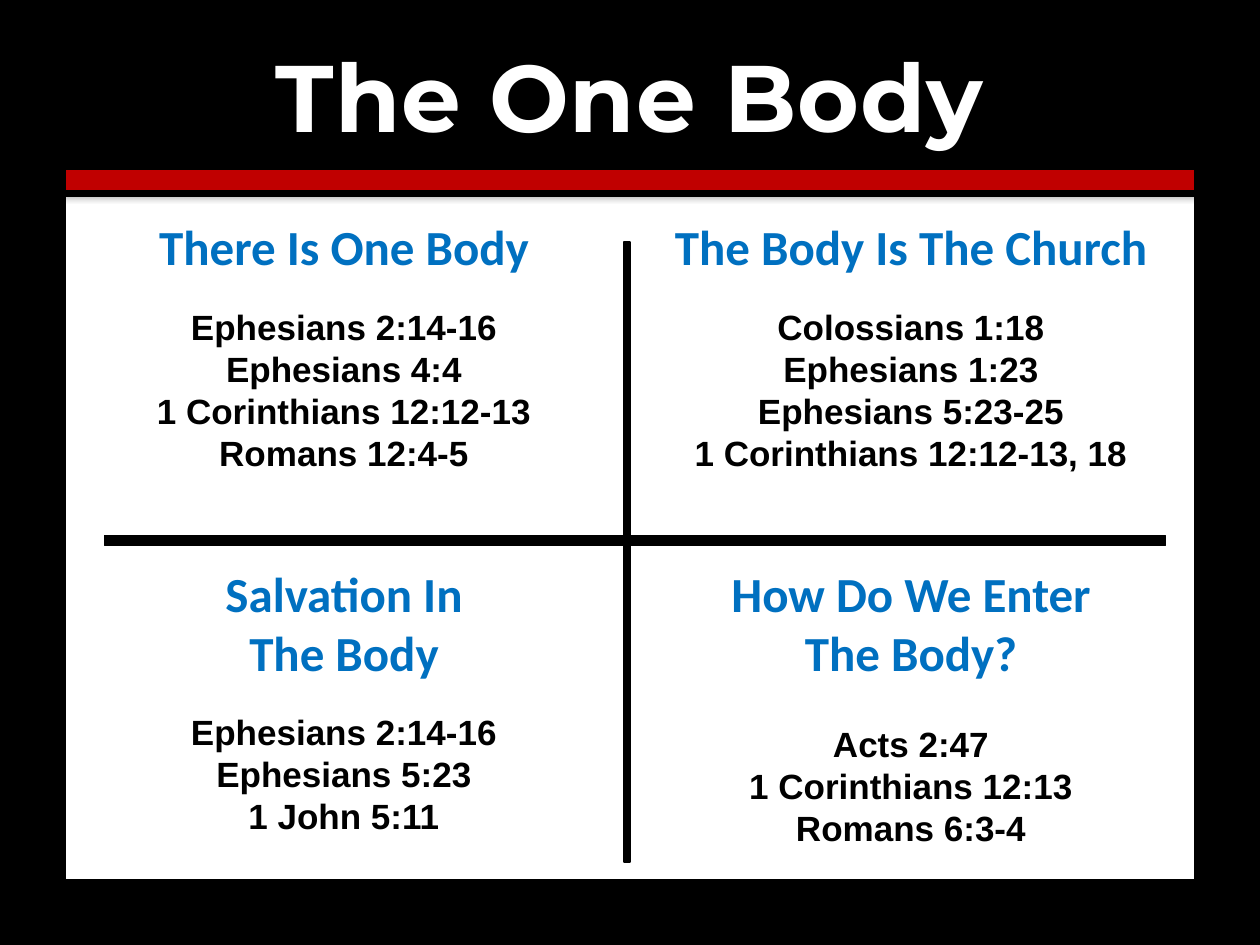
from lxml.etree import SubElement as Sub
from pptx import Presentation
from pptx.dml.color import RGBColor as RGB
from pptx.enum.shapes import MSO_SHAPE as Form
from pptx.enum.text import MSO_ANCHOR as Anchor, MSO_AUTO_SIZE as Fit, PP_ALIGN as Align
from pptx.oxml.ns import qn
from pptx.util import Inches, Pt

theme = {
    "title": ("Montserrat", 54, "FFFFFF"),
    "head": ("Calibri", 28, "0070C0"),
    "verse": ("Arial", 20, "000000"),
    "black": "000000", "white": "FFFFFF", "red": "C00000",
}

deck = Presentation()
deck.slide_width, deck.slide_height = Inches(10), Inches(7.5)
page = deck.slides.add_slide(deck.slide_layouts[4])
page.background.fill.solid()
page.background.fill.fore_color.rgb = RGB.from_string(theme["black"])


def block(box, fill, edge):
    """Add a filled rectangle with a black edge."""
    part = page.shapes.add_shape(Form.RECTANGLE, *map(Inches, box))
    part.shadow.inherit = False
    part.fill.solid()
    part.fill.fore_color.rgb = RGB.from_string(theme[fill])
    part.line.color.rgb = RGB.from_string(theme["black"])
    part.line.width = Pt(edge)
    return part


def write(para, text, style):
    """Add one centred, bold run in a theme style."""
    face, size, tint = theme[style]
    para.alignment = Align.CENTER
    para.space_before = Pt(0)
    run = para.add_run()
    run.text = text
    run.font.name, run.font.size, run.font.bold = face, Pt(size), True
    run.font.color.rgb = RGB.from_string(tint)
    return run


# Panel and red bar, behind the text
left, wide = 0.5, 9
panel = block((left, 1.54, wide, 5.46), "white", 3)
bar = block((left, 1.33, wide, 0.2), "red", 3)
tree = panel.element.getparent()
for spot, part in enumerate((panel, bar), 2):
    tree.insert(spot, part.element)

# Soft shadow under the bar
glow = Sub(bar.element.spPr.find(qn("a:effectLst")), qn("a:outerShdw"),
           blurRad=str(Pt(5)), dist="0", dir="0", rotWithShape="0")
tone = Sub(glow, qn("a:srgbClr"), val=theme["black"])
Sub(tone, qn("a:alpha"), val="40000")

# Title
title = page.shapes.title
title.left, title.top, title.width, title.height = map(Inches, (left, 0.5, wide, 0.5))
title.text_frame.auto_size = Fit.NONE
title.text_frame.vertical_anchor = Anchor.MIDDLE
run = write(title.text_frame.paragraphs[0], "The One Body", "title")
run.font._element.set("spc", "50")

# Quadrants, row by row: heading lines, verses, gap between them in points
cols = ((left, 4.46), (4.96, 4.54))
rows = ((1.67, 2.15), (4.42, 2.5))
quads = (
    (["There Is One Body"],
     ["Ephesians 2:14-16", "Ephesians 4:4", "1 Corinthians 12:12-13", "Romans 12:4-5"], 17),
    (["The Body Is The Church"],
     ["Colossians 1:18", "Ephesians 1:23", "Ephesians 5:23-25", "1 Corinthians 12:12-13, 18"], 17),
    (["Salvation In", "The Body"],
     ["Ephesians 2:14-16", "Ephesians 5:23", "1 John 5:11"], 17),
    (["How Do We Enter", "The Body?"],
     ["Acts 2:47", "1 Corinthians 12:13", "Romans 6:3-4"], 24),
)
for num, (heads, verses, gap) in enumerate(quads):
    (x, w), (y, h) = cols[num % 2], rows[num // 2]
    body = page.placeholders[num + 1]
    body.left, body.top, body.width, body.height = map(Inches, (x, y, w, h))
    frame = body.text_frame
    frame.auto_size = Fit.NONE
    frame.vertical_anchor = Anchor.TOP
    lines = [(text, "head") for text in heads] + [(text, "verse") for text in verses]
    for spot, (text, style) in enumerate(lines):
        para = frame.add_paragraph() if spot else frame.paragraphs[0]
        write(para, text, style)
        if style == "verse":
            para.line_spacing = Pt(24)
        if spot == len(heads):
            para.space_before = Pt(gap)
        props = para._p.get_or_add_pPr()
        props.set("marL", "0")
        props.set("indent", "0")
        Sub(props, qn("a:buNone"))

# Cross between the quadrants
block((4.95, 1.92, 0.05, 4.92), "black", 1)
block((0.83, 4.25, 8.42, 0.08), "black", 1)

deck.save("out.pptx")
